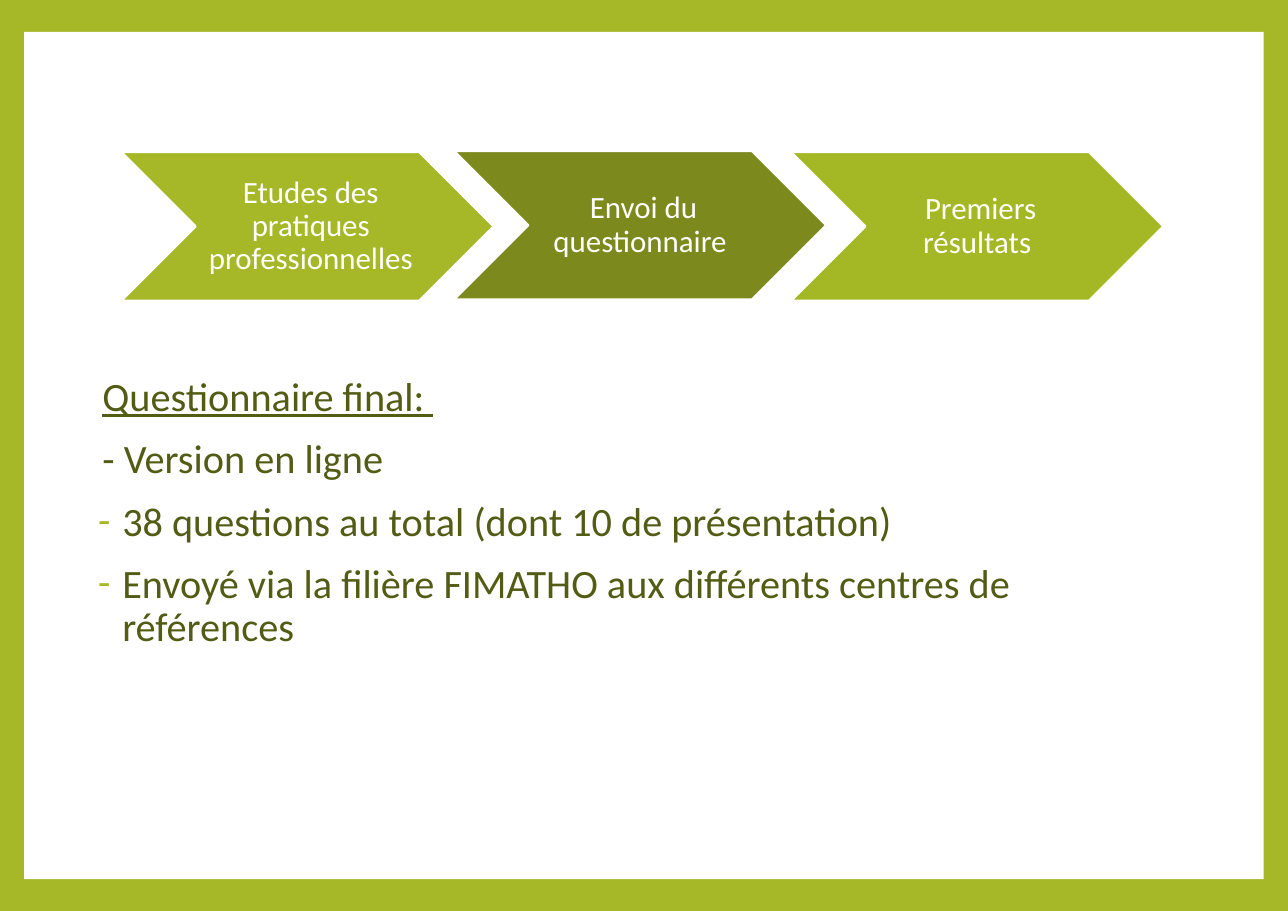
from dataclasses import dataclass

from lxml import etree
from pptx import Presentation
from pptx.dml.color import RGBColor
from pptx.enum.shapes import MSO_SHAPE
from pptx.enum.text import MSO_ANCHOR, PP_ALIGN
from pptx.oxml.ns import qn
from pptx.util import Inches, Pt

RECT, CHEVRON = MSO_SHAPE.RECTANGLE, MSO_SHAPE.CHEVRON
TOP, MIDDLE = MSO_ANCHOR.TOP, MSO_ANCHOR.MIDDLE
LEFT, CENTER = PP_ALIGN.LEFT, PP_ALIGN.CENTER


@dataclass(frozen=True)
class Theme:
    font: str = "Calibri"
    green: str = "A6B727"
    active: str = "7C891D"
    next_step: str = "A4B724"
    white: str = "FFFFFF"
    text: str = "535C14"
    step_size: float = 20.2
    body_size: float = 26.3
    line_spacing: float = 0.9
    space_before: float = 12.3


@dataclass(frozen=True)
class Step:
    text: str
    left: float
    top: float
    fill: str


@dataclass(frozen=True)
class Line:
    text: str
    bullet: bool = False
    underline: bool = False


THEME = Theme()

STEPS = [
    Step("Etudes des pratiques professionnelles", 1.1, 1.38, THEME.green),
    Step("Envoi du questionnaire ", 4.12, 1.37, THEME.active),
    Step("Premiers résultats ", 7.18, 1.38, THEME.next_step),
]

LINES = [
    Line("Questionnaire final: ", underline=True),
    Line("- Version en ligne"),
    Line("38 questions au total (dont 10 de présentation)", bullet=True),
    Line("Envoyé via la filière FIMATHO aux différents centres de références",
         bullet=True),
]


def rgb(color: str) -> RGBColor:
    return RGBColor.from_string(color)


def apply(target, values: dict) -> None:
    for name, value in values.items():
        setattr(target, name, value)


def add_block(s, kind, left: float, top: float, width: float, height: float,
              fill: str):
    sp = s.shapes.add_shape(kind, Inches(left), Inches(top),
                            Inches(width), Inches(height))
    sp.shadow.inherit = False
    sp.fill.solid()
    sp.fill.fore_color.rgb = rgb(fill)
    sp.line.fill.background()
    return sp


def set_frame(tf, anchor, left: float, top: float, right: float,
              bottom: float) -> None:
    apply(tf, {"word_wrap": True, "vertical_anchor": anchor,
               "margin_left": Inches(left), "margin_top": Inches(top),
               "margin_right": Inches(right), "margin_bottom": Inches(bottom)})


def write(p, text: str, size: float, color: str, align,
          underline: bool = False) -> None:
    apply(p, {"alignment": align, "line_spacing": THEME.line_spacing})
    r = p.add_run()
    r.text = text
    apply(r.font, {"name": THEME.font, "size": Pt(size),
                   "underline": underline})
    r.font.color.rgb = rgb(color)


def indent(p, left: float, first: float) -> None:
    ppr = p._p.get_or_add_pPr()
    ppr.set("marL", str(Inches(left)))
    ppr.set("indent", str(Inches(first)))


def add_bullet(p, char: str, color: str) -> None:
    ppr = p._p.get_or_add_pPr()
    clr = etree.SubElement(ppr, qn("a:buClr"))
    etree.SubElement(clr, qn("a:srgbClr")).set("val", color)
    etree.SubElement(ppr, qn("a:buFont")).set("typeface", THEME.font)
    etree.SubElement(ppr, qn("a:buChar")).set("char", char)


def add_step(s, step: Step) -> None:
    sp = add_block(s, CHEVRON, step.left, step.top, 3.38, 1.35, step.fill)
    sp.adjustments[0] = 0.5
    sp.line.color.rgb = rgb(THEME.white)
    sp.line.width = Pt(1.5)
    set_frame(sp.text_frame, MIDDLE, 0.09, 0.03, 0.03, 0.03)
    write(sp.text_frame.paragraphs[0], step.text, THEME.step_size,
          THEME.white, CENTER)


def add_body(s, lines: list[Line]) -> None:
    sp = s.shapes.add_textbox(Inches(0.8), Inches(3.38),
                              Inches(10.06), Inches(3.32))
    tf = sp.text_frame
    set_frame(tf, TOP, 0.09, 0.04, 0.09, 0.04)
    for i, line in enumerate(lines):
        p = tf.add_paragraph() if i else tf.paragraphs[0]
        if line.bullet:
            indent(p, 0.22, -0.22)
            add_bullet(p, "-", THEME.green)
        else:
            indent(p, 0.04, 0)
        if i:
            p.space_before = Pt(THEME.space_before)
        write(p, line.text, THEME.body_size, THEME.text, LEFT, line.underline)


def main() -> None:
    prs = Presentation()
    prs.slide_width, prs.slide_height = Inches(11.69), Inches(8.27)
    s = prs.slides.add_slide(prs.slide_layouts[6])

    # Green frame around a white page
    s.background.fill.solid()
    s.background.fill.fore_color.rgb = rgb(THEME.green)
    add_block(s, RECT, 0.22, 0.29, 11.25, 7.69, THEME.white)

    # Project steps
    for step in STEPS:
        add_step(s, step)

    # Questionnaire details
    add_body(s, LINES)

    prs.save("out.pptx")


if __name__ == "__main__":
    main()
